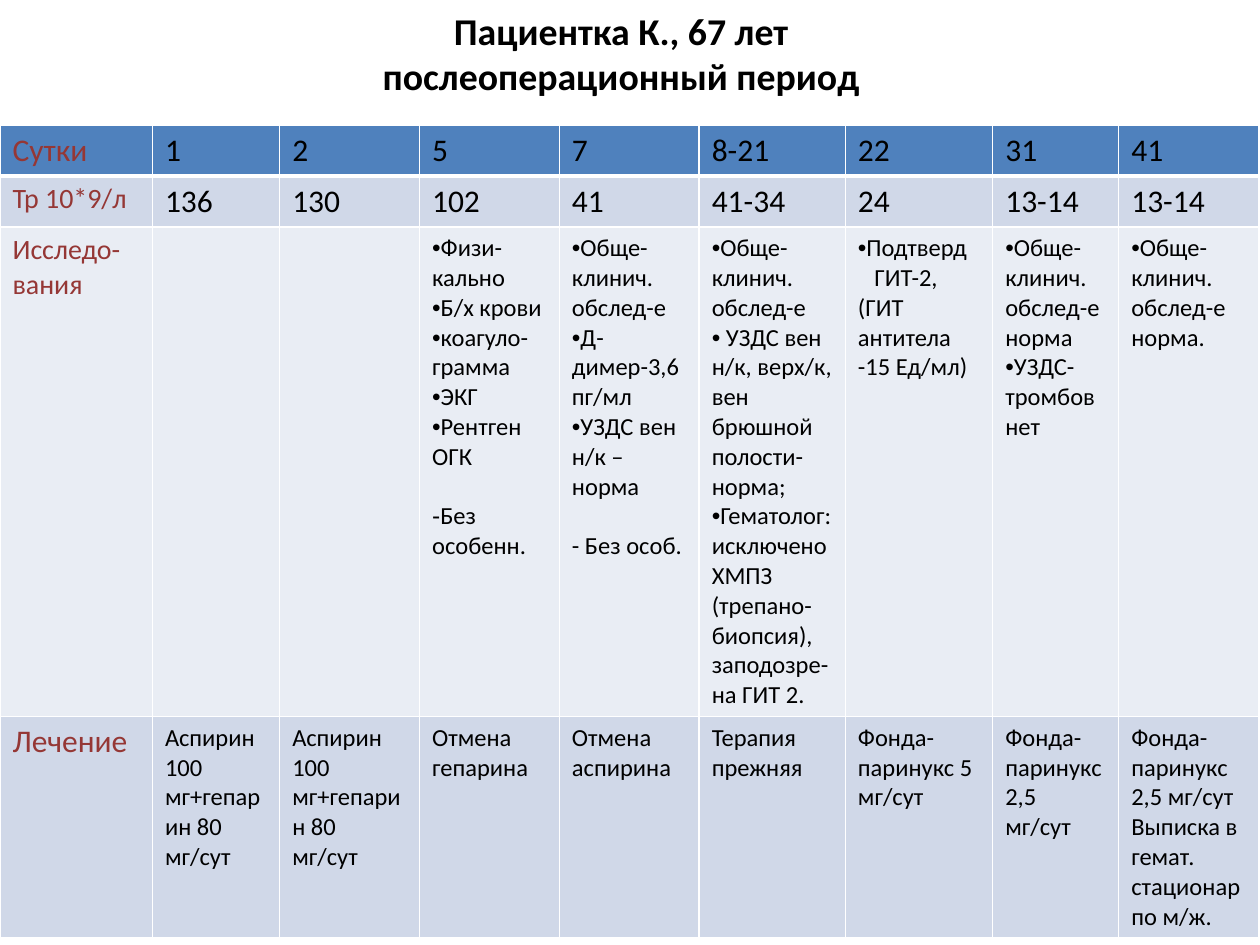
from lxml.etree import SubElement
from pptx import Presentation
from pptx.dml.color import RGBColor
from pptx.enum.text import MSO_ANCHOR, PP_ALIGN
from pptx.oxml.ns import qn
from pptx.util import Inches, Pt

THEME = {
    "font": "Calibri",
    "black": "000000", "label": "953735", "border": "FFFFFF",
    "header": "4F81BD", "band": "D0D8E8", "light": "E9EDF4",
    "title": 21.6, "large": 18, "medium": 16, "small": 14,
}
ROW_HEIGHTS = [0.35, 0.35, 3.8, 1.39]
ROW_FILLS = ["header", "band", "light", "band"]
LABEL_SIZES = ["large", "medium", "medium", "large"]
VALUE_SIZES = ["large", "large", "small", "small"]
COLUMN_WIDTHS = [1.21, 1.01, 1.11, 1.11, 1.11, 1.16, 1.17, 1, 1.11]
GAP = Pt(17)  # one line of small text


def write_text(text_frame, lines, size, color="black", bold=False, align=None):
    """Each line is a string, or a string with its bullet, gap and indent.

    A string that starts with • becomes a bulleted paragraph.
    """
    for number, line in enumerate(lines):
        text, layout = line if isinstance(line, tuple) else (line, {})
        bullet = layout.get("bullet")
        if text.startswith("•"):
            bullet, text = "•", text[1:]
        paragraph = text_frame.paragraphs[0] if number == 0 else text_frame.add_paragraph()
        paragraph.text = text
        paragraph.alignment = align
        paragraph.space_before = layout.get("gap", 0)
        properties = paragraph._p.get_or_add_pPr()
        properties.set("marL", "0")
        properties.set("indent", str(layout.get("indent", 0)))
        if bullet:
            SubElement(properties, qn("a:buFont"), typeface="Arial")
            SubElement(properties, qn("a:buChar"), char=bullet)
        else:
            SubElement(properties, qn("a:buNone"))
        for run in paragraph.runs:
            run.font.name = THEME["font"]
            run.font.size = Pt(THEME[size])
            run.font.bold = bold
            run.font.color.rgb = RGBColor.from_string(THEME[color])


def add_borders(cell, **widths):
    properties = cell._tc.get_or_add_tcPr()
    for side in "LRTB":
        line = SubElement(properties, qn(f"a:ln{side}"), w=str(Pt(widths.get(side, 1))))
        fill = SubElement(line, qn("a:solidFill"))
        SubElement(fill, qn("a:srgbClr"), val=THEME["border"])


STUDIES = [
    ["Исследо-вания"],
    [],
    [],
    ["•Физи-кально", "•Б/х крови", "•коагуло-грамма", "•ЭКГ", "•Рентген ОГК",
     ("Без особенн.", {"bullet": "-", "gap": GAP})],
    ["•Обще-клинич. обслед-е", "•Д-димер-3,6пг/мл", "•УЗДС вен н/к –норма",
     ("- Без особ.", {"gap": GAP})],
    ["•Обще-клинич. обслед-е",
     "• УЗДС вен н/к, верх/к, вен брюшной полости- норма;",
     "•Гематолог: исключеноХМПЗ (трепано-биопсия), заподозре-на ГИТ 2."],
    ["•Подтверд", ("ГИТ-2, (ГИТ антитела -15 Ед/мл)", {"indent": Inches(0.13)})],
    ["•Обще-клинич. обслед-е норма", "•УЗДС- тромбов нет"],
    ["•Обще-клинич. обслед-е норма."],
]
START_DOSE = "Аспирин 100 мг+гепарин 80 мг/сут"
LATE_DOSE = "Фонда-паринукс 2,5 мг/сут"
TREATMENT = [
    ["Лечение"], [START_DOSE], [START_DOSE], ["Отмена гепарина"], ["Отмена аспирина"],
    ["Терапия прежняя"], ["Фонда-паринукс 5 мг/сут"], [LATE_DOSE],
    [LATE_DOSE, "Выписка в гемат.", "стационар по м/ж."],
]
DAYS = [[day] for day in ("Сутки", "1", "2", "5", "7", "8-21", "22", "31", "41")]
PLATELETS = [[count] for count in (
    "Тр 10*9/л", "136", "130", "102", "41", "41-34", "24", "13-14", "13-14")]
ROWS = [DAYS, PLATELETS, STUDIES, TREATMENT]

presentation = Presentation()
presentation.slide_width, presentation.slide_height = Inches(10), Inches(7.5)
slide = presentation.slides.add_slide(presentation.slide_layouts[5])

title = slide.shapes.title
title.left, title.top, title.width, title.height = (
    Inches(0.43), 0, Inches(9), Inches(0.84))
title.text_frame.vertical_anchor = MSO_ANCHOR.MIDDLE
write_text(title.text_frame, ["Пациентка К., 67 лет\vпослеоперационный период"],
           "title", bold=True, align=PP_ALIGN.CENTER)

frame = slide.shapes.add_table(len(ROWS), len(COLUMN_WIDTHS), 0, Inches(0.99),
                               presentation.slide_width, Inches(6.37))
table = frame.table
table.first_row = table.horz_banding = False
for column, width in zip(table.columns, COLUMN_WIDTHS):
    column.width = Inches(width)
for row, height in zip(table.rows, ROW_HEIGHTS):
    row.height = Inches(height)
frame.width, frame.height = presentation.slide_width, Inches(6.37)

for row_number, row in enumerate(ROWS):
    for column_number, lines in enumerate(row):
        cell = table.cell(row_number, column_number)
        add_borders(cell, T=3 if row_number == 1 else 1, B=3 if row_number == 0 else 1)
        cell.fill.solid()
        cell.fill.fore_color.rgb = RGBColor.from_string(THEME[ROW_FILLS[row_number]])
        is_label = column_number == 0
        sizes = LABEL_SIZES if is_label else VALUE_SIZES
        write_text(cell.text_frame, lines, sizes[row_number],
                   color="label" if is_label else "black")

presentation.save("out.pptx")
